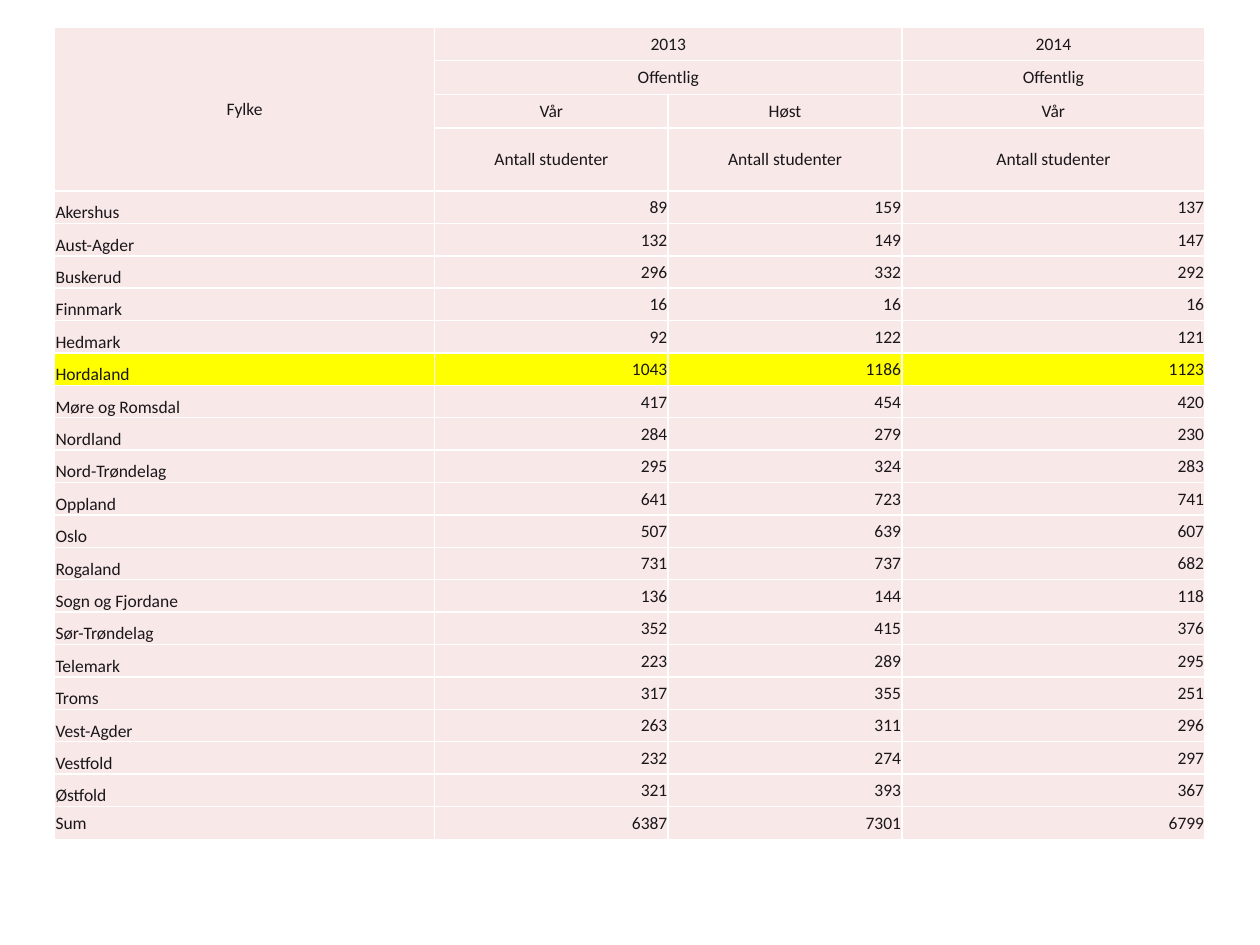
from lxml import etree
from pptx import Presentation
from pptx.dml.color import RGBColor
from pptx.enum.text import MSO_ANCHOR, PP_ALIGN
from pptx.oxml.ns import qn
from pptx.util import Cm, Pt

LEFT, CENTER, RIGHT = PP_ALIGN.LEFT, PP_ALIGN.CENTER, PP_ALIGN.RIGHT
MIDDLE, BOTTOM = MSO_ANCHOR.MIDDLE, MSO_ANCHOR.BOTTOM

PINK = RGBColor(0xF9, 0xE8, 0xE8)
YELLOW = RGBColor(0xFF, 0xFF, 0x00)
INK = RGBColor(0x1A, 0x17, 0x1B)
WHITE = RGBColor(0xFF, 0xFF, 0xFF)

HEADER = [
    ("Fylke", "2013", "", "2014"),
    ("", "Offentlig", "", "Offentlig"),
    ("", "Vår", "Høst", "Vår"),
    ("", "Antall studenter", "Antall studenter", "Antall studenter"),
]
# Each merge is (first row, first column, last row, last column)
HEADER_MERGES = [(0, 0, 3, 0), (0, 1, 0, 2), (1, 1, 1, 2)]
COUNTIES = [
    ("Akershus", 89, 159, 137),
    ("Aust-Agder", 132, 149, 147),
    ("Buskerud", 296, 332, 292),
    ("Finnmark", 16, 16, 16),
    ("Hedmark", 92, 122, 121),
    ("Hordaland", 1043, 1186, 1123),
    ("Møre og Romsdal", 417, 454, 420),
    ("Nordland", 284, 279, 230),
    ("Nord-Trøndelag", 295, 324, 283),
    ("Oppland", 641, 723, 741),
    ("Oslo", 507, 639, 607),
    ("Rogaland", 731, 737, 682),
    ("Sogn og Fjordane", 136, 144, 118),
    ("Sør-Trøndelag", 352, 415, 376),
    ("Telemark", 223, 289, 295),
    ("Troms", 317, 355, 251),
    ("Vest-Agder", 263, 311, 296),
    ("Vestfold", 232, 274, 297),
    ("Østfold", 321, 393, 367),
]
TOTAL = ("Sum", 6387, 7301, 6799)
HIGHLIGHTED = "Hordaland"

COLUMN_WIDTHS = [7.66, 4.71, 4.71, 6.11]
HEADER_HEIGHTS = [0.68, 0.68, 0.68, 1.27]
TOTAL_HEIGHT = 0.68


def add_borders(cell):
    """Draw a thin white line on all four sides of the cell."""
    properties = cell._tc.get_or_add_tcPr()
    for side in ("lnL", "lnR", "lnT", "lnB"):
        line = etree.SubElement(properties, qn(f"a:{side}"), w=str(Pt(1)))
        fill = etree.SubElement(line, qn("a:solidFill"))
        etree.SubElement(fill, qn("a:srgbClr"), val=str(WHITE))


def style_cell(cell, value, align, anchor, color):
    add_borders(cell)
    cell.fill.solid()
    cell.fill.fore_color.rgb = color
    cell.margin_left = cell.margin_right = cell.margin_top = Cm(0.02)
    cell.margin_bottom = 0
    cell.vertical_anchor = anchor
    cell.text = str(value)
    paragraph = cell.text_frame.paragraphs[0]
    paragraph.alignment = align
    paragraph.font.name = "Calibri"
    paragraph.font.size = Pt(10)
    paragraph.font.color.rgb = INK


def add_student_table(slide, left, top, width, height):
    rows = HEADER + COUNTIES + [TOTAL]
    table = slide.shapes.add_table(
        len(rows), len(COLUMN_WIDTHS), Cm(left), Cm(top), Cm(width), Cm(height)
    ).table
    table.first_row = table.horz_banding = False

    # Column widths; the counties share the height left by header and total
    for column, column_width in zip(table.columns, COLUMN_WIDTHS):
        column.width = Cm(column_width)
    county_height = (height - sum(HEADER_HEIGHTS) - TOTAL_HEIGHT) / len(COUNTIES)
    heights = HEADER_HEIGHTS + [county_height] * len(COUNTIES) + [TOTAL_HEIGHT]
    for row, row_height in zip(table.rows, heights):
        row.height = Cm(row_height)

    # Cell contents
    for r, values in enumerate(rows):
        color = YELLOW if values[0] == HIGHLIGHTED else PINK
        for c, value in enumerate(values):
            if r < len(HEADER):
                align, anchor = CENTER, MIDDLE
            elif c == 0:
                align, anchor = LEFT, MIDDLE if values is TOTAL else BOTTOM
            else:
                align, anchor = RIGHT, MIDDLE
            style_cell(table.cell(r, c), value, align, anchor, color)

    # Merged header cells
    for top_row, first_column, bottom_row, last_column in HEADER_MERGES:
        table.cell(top_row, first_column).merge(table.cell(bottom_row, last_column))


def main():
    presentation = Presentation()
    presentation.slide_width, presentation.slide_height = Cm(25.4), Cm(19.05)
    slide = presentation.slides.add_slide(presentation.slide_layouts[6])
    add_student_table(slide, 1.1, 0.54, sum(COLUMN_WIDTHS), 16.4)
    presentation.save("out.pptx")


if __name__ == "__main__":
    main()
